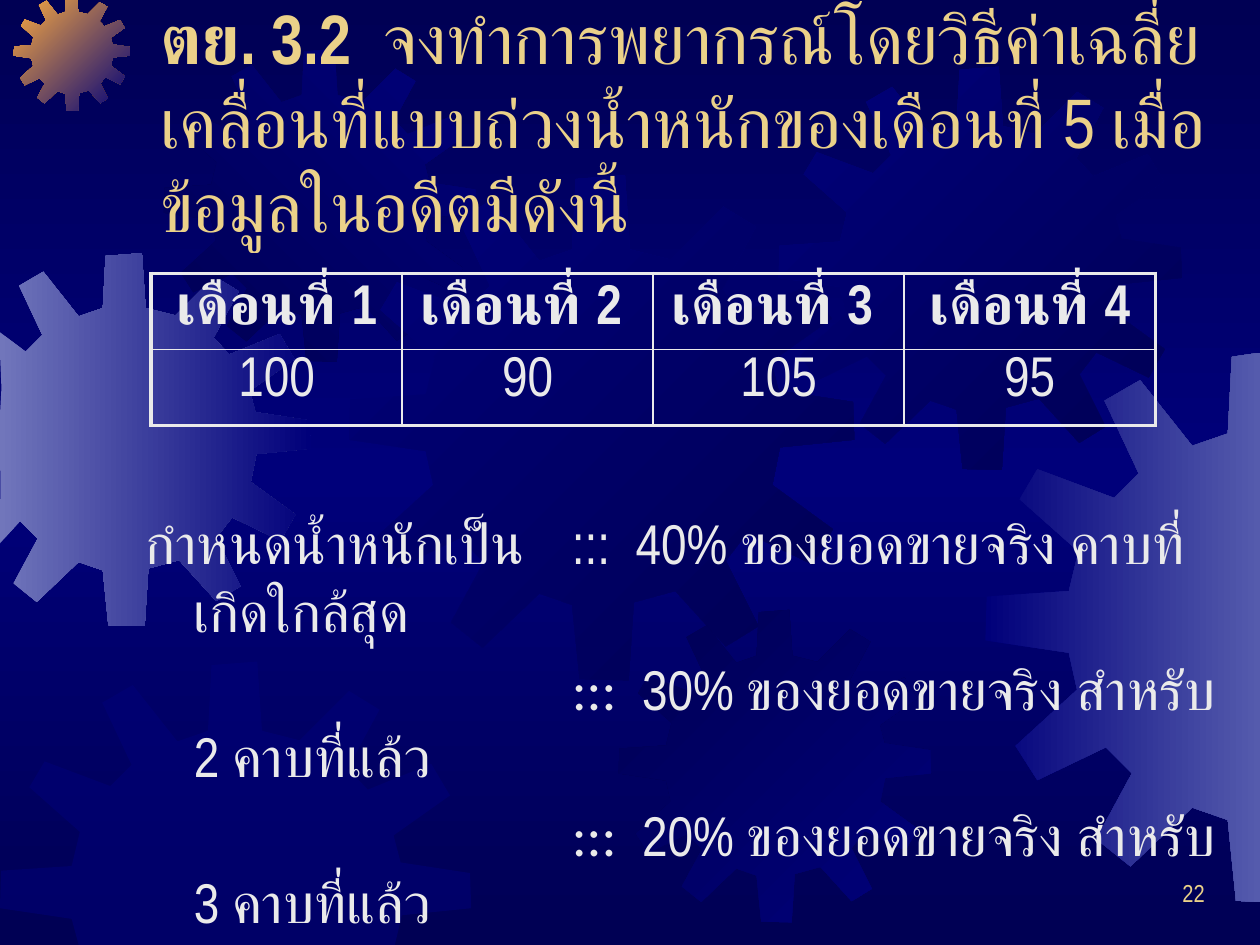
import copy

import pptx
import pptx.dml.color
import pptx.enum.text
import pptx.oxml
import pptx.util
from pptx.dml.color import RGBColor
from pptx.util import Inches

NAVY = RGBColor(0x00, 0x00, 0x54)
BLUE = RGBColor(0x00, 0x00, 0x7A)
LAVENDER = RGBColor(0x71, 0x76, 0xBB)
VIOLET = RGBColor(0x55, 0x5B, 0xAD)
ORANGE = RGBColor(0xFC, 0xAB, 0x40)
GOLD = RGBColor(0xEB, 0xD1, 0x89)
WHITE = RGBColor(0xEA, 0xEA, 0xEA)
FONT = "Arial Narrow"
ALIGN = pptx.enum.text.PP_ALIGN
ANCHOR = pptx.enum.text.MSO_ANCHOR
SLIDE_WIDTH, SLIDE_HEIGHT = 10, 7.5
THIN, THICK = 1, 2.25
GEAR_UNITS = 401
GEAR_POINTS = [
    (255, 67), (223, 59), (219, 0), (180, 3), (177, 59), (151, 68),
    (113, 20), (87, 35), (112, 88), (94, 106), (38, 85), (25, 107),
    (68, 145), (61, 174), (1, 178), (0, 210), (61, 219), (67, 246),
    (22, 287), (38, 312), (88, 288), (107, 307), (81, 355), (106, 375),
    (151, 332), (177, 341), (183, 400), (222, 401), (226, 339), (259, 330),
    (299, 374), (325, 358), (299, 306), (316, 284), (368, 309), (384, 281),
    (336, 246), (342, 216), (401, 210), (400, 180), (341, 171), (335, 148),
    (383, 114), (367, 87), (313, 109), (296, 91), (323, 41), (297, 25),
]
GEARS = [
    (-0.49, 2.01, 2.96, LAVENDER, BLUE, 0),
    (0.11, -0.04, 0.92, ORANGE, BLUE, 45),
    (1.3, 0.39, 2.48, NAVY, BLUE, 315),
    (2.77, 1.39, 4.01, BLUE, NAVY, 45),
    (0, 5.25, 3.74, BLUE, None, 0),
    (4.91, 4.84, 2.48, NAVY, BLUE, 45),
    (6.18, 0.53, 3.2, BLUE, NAVY, 45),
    (7.82, 2.8, 4.36, BLUE, VIOLET, 0),
]
MONTHS = [
    ["เดือนที่ 1", "เดือนที่ 2 ", "เดือนที่ 3 ", "เดือนที่ 4"],
    ["100", "90", "105", "95"],
]
LATER_WEIGHTS = [
    "30% ของยอดขายจริง สำหรับ 2 คาบที่แล้ว",
    "20% ของยอดขายจริง สำหรับ 3 คาบที่แล้ว",
]


def add_run(paragraph, text, size=32, color=WHITE, bold=False, font=FONT):
    """Append formatted text to a paragraph."""
    run = paragraph.add_run()
    run.text = text
    run.font.size = pptx.util.Pt(size)
    run.font.name = font
    run.font.bold = bold
    run.font.color.rgb = color


def set_gradient(fill, start, end, angle):
    """Fill with two colours along a clockwise angle."""
    fill.gradient()
    fill.gradient_angle = (360 - angle) % 360
    for stop, color, position in zip(fill.gradient_stops, (start, end), (0, 1)):
        stop.color.rgb = color
        stop.position = position


def set_background(slide):
    """Shade the slide from navy to blue and back."""
    fill = slide.background.fill
    set_gradient(fill, NAVY, BLUE, 90)
    stops = slide.element.xpath(".//a:gsLst")[0]
    stops.append(copy.deepcopy(stops[0]))
    fill.gradient_stops[1].position = 0.5
    fill.gradient_stops[2].position = 1


def add_gear(slide, left, top, size, start, end, angle):
    """Draw a gear cut off at the slide edges."""
    points = [
        (
            Inches(min(max(left + x * size / GEAR_UNITS, 0), SLIDE_WIDTH)),
            Inches(min(max(top + y * size / GEAR_UNITS, 0), SLIDE_HEIGHT)),
        )
        for x, y in GEAR_POINTS
    ]
    builder = slide.shapes.build_freeform(*points[0])
    builder.add_line_segments(points[1:], close=True)
    gear = builder.convert_to_shape()
    gear.shadow.inherit = False
    gear.line.fill.background()
    if end is None:
        gear.fill.solid()
        gear.fill.fore_color.rgb = start
        color = gear.element.spPr.xpath("./a:solidFill/a:srgbClr")[0]
        alpha = color.makeelement(pptx.oxml.ns.qn("a:alpha"), {"val": "50000"})
        color.append(alpha)
    else:
        set_gradient(gear.fill, start, end, angle)


def add_title(slide):
    """Place the question in the title placeholder."""
    title = slide.shapes.title
    title.left, title.top = Inches(1.17), Inches(0.33)
    title.width, title.height = Inches(8.5), Inches(1.25)
    frame = title.text_frame
    frame.word_wrap = True
    frame.auto_size = pptx.enum.text.MSO_AUTO_SIZE.NONE
    frame.vertical_anchor = ANCHOR.MIDDLE
    paragraph = frame.paragraphs[0]
    paragraph.alignment = ALIGN.LEFT
    add_run(paragraph, "ตย. 3.2", size=40, color=GOLD, bold=True)
    question = (
        "  จงทำการพยากรณ์โดยวิธีค่าเฉลี่ยเคลื่อนที่แบบถ่วงน้ำหนัก"
        "ของเดือนที่ 5 เมื่อข้อมูลในอดีตมีดังนี้"
    )
    add_run(paragraph, question, size=40, color=GOLD)
    slide.shapes.element.append(title.element)


def add_text_box(slide, left, top, width, height):
    """Add a wrapping text box and return its frame."""
    box = slide.shapes.add_textbox(
        Inches(left), Inches(top), Inches(width), Inches(height)
    )
    box.text_frame.word_wrap = True
    return box.text_frame


def add_weights(slide):
    """List the weights, the later ones indented to the first colons."""
    frame = add_text_box(slide, 1.06, 3.99, 8.74, 2.84)
    lines = [
        [("กำหนดน้ำหนักเป็น\t:::  40% ของยอดขายจริง คาบที่เกิดใกล้สุด", FONT)]
    ]
    for weight in LATER_WEIGHTS:
        lines.append([(":::  ", "Calibri"), (weight, FONT)])
    for index, runs in enumerate(lines):
        paragraph = frame.add_paragraph() if index else frame.paragraphs[0]
        properties = paragraph._p.get_or_add_pPr()
        properties.set("marL", str(Inches(0.38)))
        properties.set("indent", str(Inches(3 if index else -0.38)))
        if index:
            paragraph.space_before = pptx.util.Pt(6.4)
        for text, font in runs:
            add_run(paragraph, text, font=font)


def set_border(cell, side, width):
    """Draw one side of a table cell."""
    properties = cell._tc.get_or_add_tcPr()
    namespace = pptx.oxml.ns.nsdecls("a")
    properties.append(
        pptx.oxml.parse_xml(
            f'<a:ln{side} {namespace} w="{pptx.util.Pt(width)}"><a:solidFill>'
            f'<a:srgbClr val="{WHITE}"/></a:solidFill></a:ln{side}>'
        )
    )


def add_months(slide):
    """Add the table of monthly sales."""
    rows, columns = len(MONTHS), len(MONTHS[0])
    table = slide.shapes.add_table(
        rows, columns, Inches(1.2), Inches(2.17), Inches(7.97), Inches(1.2)
    ).table
    table.first_row = False
    table.horz_banding = False
    for row, texts in enumerate(MONTHS):
        for column, text in enumerate(texts):
            cell = table.cell(row, column)
            outer = {
                "L": column == 0,
                "R": column == columns - 1,
                "T": row == 0,
                "B": row == rows - 1,
            }
            for side, is_outer in outer.items():
                set_border(cell, side, THICK if is_outer else THIN)
            cell.fill.background()
            cell.margin_bottom = Inches(0.02)
            paragraph = cell.text_frame.paragraphs[0]
            paragraph.alignment = ALIGN.CENTER
            add_run(paragraph, text, bold=row == 0)


def main():
    """Build the slide and save it."""
    presentation = pptx.Presentation()
    presentation.slide_width = Inches(SLIDE_WIDTH)
    presentation.slide_height = Inches(SLIDE_HEIGHT)
    slide = presentation.slides.add_slide(presentation.slide_layouts[5])
    set_background(slide)
    for gear in GEARS:
        add_gear(slide, *gear)
    number = add_text_box(slide, 7.58, 6.92, 2.08, 0.5).paragraphs[0]
    number.alignment = ALIGN.RIGHT
    add_run(number, "22", size=14, color=GOLD)
    add_title(slide)
    add_weights(slide)
    add_months(slide)
    presentation.save("out.pptx")


if __name__ == "__main__":
    main()
